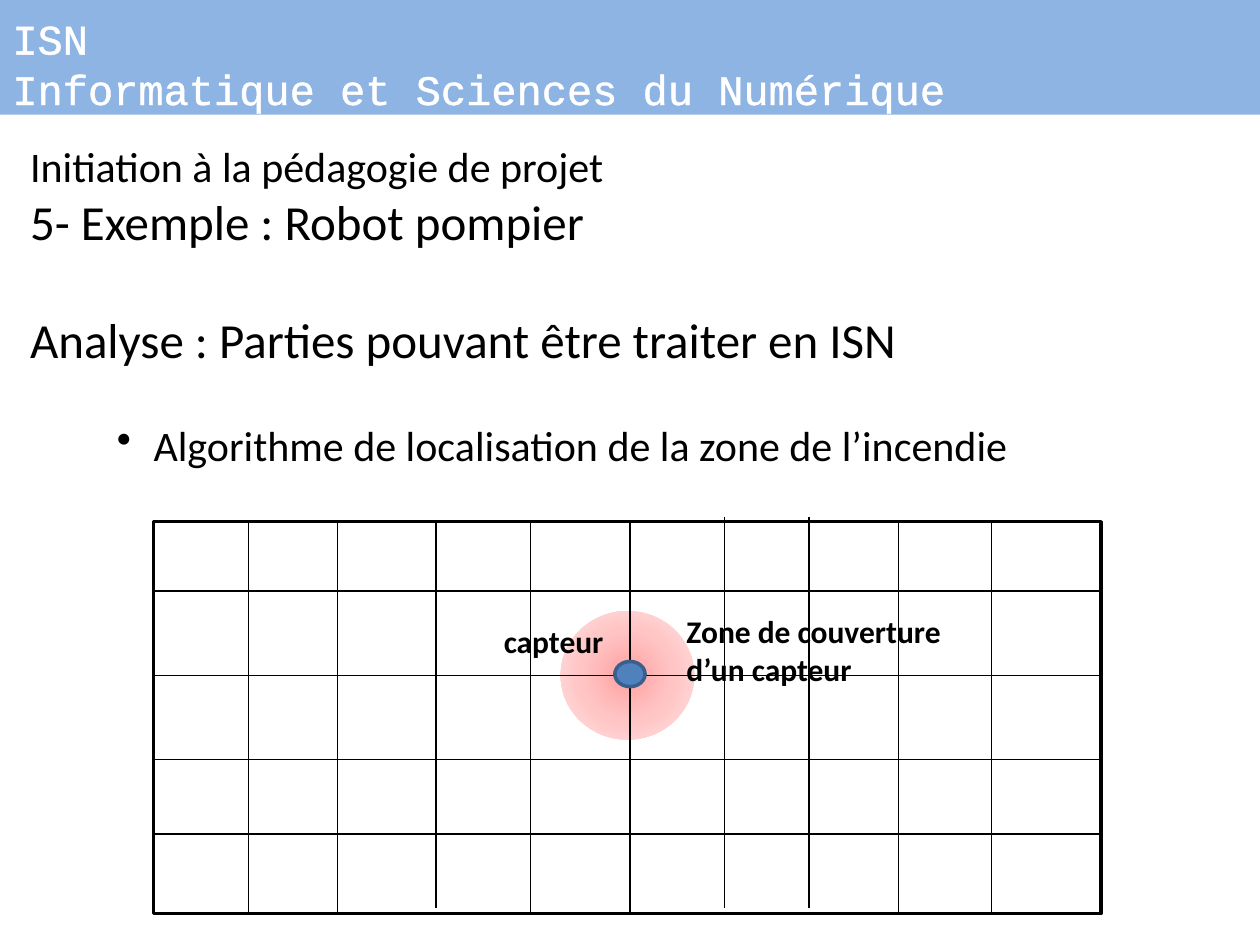
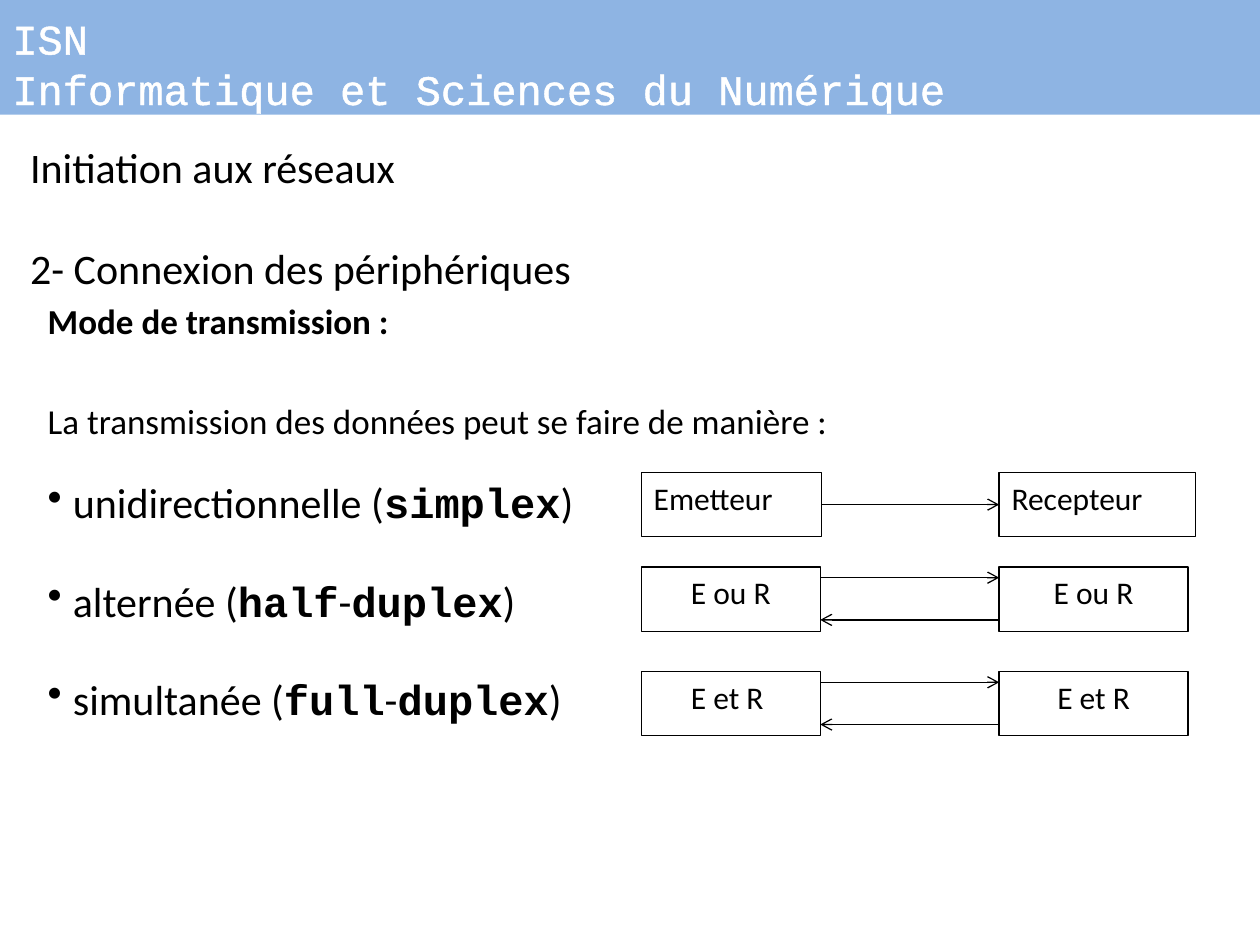
"""Build two course slides: a sensor grid and the transmission modes."""
from dataclasses import dataclass
from typing import NamedTuple

from pptx import Presentation
from pptx.dml.color import RGBColor
from pptx.enum.shapes import MSO_CONNECTOR as Link, MSO_SHAPE as Kind
from pptx.enum.text import MSO_ANCHOR as Anchor, PP_ALIGN as Align
from pptx.oxml import parse_xml
from pptx.oxml.ns import nsdecls, qn
from pptx.util import Inches, Pt

WIDE, HIGH = Inches(10), Inches(7.5)
COL, ROW = WIDE / 100, HIGH / 75
SANS, MONO = "Calibri", "Courier New"
BLACK, WHITE, BAND = "000000", "FFFFFF", "8EB4E3"
DOT, RIM = "4F81BD", "3A5F8C"
GLOW = ((0, "FFA0A0"), (50, "FFC5C5"), (100, "FFE3E3"))


class Box(NamedTuple):
    """Left, top, width and height in grid units."""
    x: float
    y: float
    w: float
    h: float


class Run(NamedTuple):
    """A stretch of text in one font."""
    text: str
    font: str = SANS
    bold: bool = False


@dataclass
class Para:
    """A paragraph; indent holds the left margin and the hanging part."""
    runs: list[Run]
    size: float
    color: str = BLACK
    before: float = 0
    indent: tuple[float, float] = (0, 0)
    mark: bool = False
    align: Align = Align.LEFT
    pitch: float | None = None


@dataclass
class Mode:
    """A transmission mode: two boxes on one row."""
    top: float
    texts: tuple[str, str]
    sizes: tuple[float, float]
    align: Align
    both: bool = True


def paint(text: str) -> RGBColor:
    """Turn a hex string into a colour."""
    return RGBColor.from_string(text)


def put(item, values: dict) -> None:
    """Set attributes from a dict."""
    for name, value in values.items():
        setattr(item, name, value)


def place(box: Box) -> tuple[int, ...]:
    """Turn grid units into lengths."""
    return (round(box.x * COL), round(box.y * ROW),
            round(box.w * COL), round(box.h * ROW))


def plain(text: str, size: float, bold: bool = False, **more) -> Para:
    """Make a paragraph of one run."""
    return Para([Run(text, SANS, bold)], size, **more)


def write(frame, paras: list[Para], wrap: bool = True) -> None:
    """Fill a text frame from the top."""
    put(frame, {"word_wrap": wrap, "vertical_anchor": Anchor.TOP})
    for i, para in enumerate(paras):
        line = frame.paragraphs[0] if i == 0 else frame.add_paragraph()
        put(line, {"alignment": para.align, "space_before": Pt(para.before)})
        if para.pitch:
            line.line_spacing = Pt(para.pitch)
        left, hang = para.indent
        props = line._p.get_or_add_pPr()
        props.set("marL", str(round(left * COL)))
        props.set("indent", str(round(-hang * COL)))
        if para.mark:
            props.append(parse_xml(f'<a:buChar {nsdecls("a")} char="•"/>'))
        for part in para.runs:
            run = line.add_run()
            run.text = part.text
            put(run.font, {"name": part.font, "size": Pt(para.size),
                           "bold": part.bold})
            run.font.color.rgb = paint(para.color)


def note(slide, box: Box, paras: list[Para], wrap: bool = True) -> None:
    """Add a text box."""
    write(slide.shapes.add_textbox(*place(box)).text_frame, paras, wrap)


def draw(slide, kind: Kind, box: Box, fill: str | None = None,
         line: str | None = None, width: float = 0.75):
    """Add a flat shape."""
    shape = slide.shapes.add_shape(kind, *place(box))
    shape.shadow.inherit = False
    if fill:
        shape.fill.solid()
        shape.fill.fore_color.rgb = paint(fill)
    else:
        shape.fill.background()
    if line:
        shape.line.color.rgb = paint(line)
        shape.line.width = Pt(width)
    else:
        shape.line.fill.background()
    return shape


def rule(slide, x: float, y: float, to_x: float, to_y: float,
         arrow: bool = False):
    """Add a thin straight line."""
    line = slide.shapes.add_connector(
        Link.STRAIGHT, round(x * COL), round(y * ROW),
        round(to_x * COL), round(to_y * ROW))
    line.line.color.rgb = paint(BLACK)
    line.line.width = Pt(0.75)
    if arrow:
        line.line._get_or_add_ln().append(
            parse_xml(f'<a:tailEnd {nsdecls("a")} type="arrow"/>'))
    line._element.spPr.append(parse_xml(f'<a:effectLst {nsdecls("a")}/>'))
    return line


def glow(slide, box: Box) -> None:
    """Add an ellipse shaded from its centre."""
    props = draw(slide, Kind.OVAL, box)._element.spPr
    stops = "".join(f'<a:gs pos="{at * 1000}"><a:srgbClr val="{tint}"/></a:gs>'
                    for at, tint in GLOW)
    props.replace(props.find(qn("a:noFill")), parse_xml(
        f'<a:gradFill {nsdecls("a")}><a:gsLst>{stops}</a:gsLst>'
        '<a:path path="circle"><a:fillToRect l="50000" t="50000" '
        'r="50000" b="50000"/></a:path></a:gradFill>'))


def band(slide) -> None:
    """Add the title band with outlined text."""
    frame = draw(slide, Kind.RECTANGLE, Box(0, 0, 100, 9.1), BAND).text_frame
    put(frame, {"margin_top": Inches(0.1), "margin_bottom": 0})
    write(frame, [Para([Run(text, MONO)], 24, WHITE, pitch=28.8)
                  for text in ("ISN", "Informatique et Sciences du Numérique")])
    for line in frame.paragraphs:
        line.runs[0].font._element.insert(0, parse_xml(
            f'<a:ln {nsdecls("a")} w="{Pt(1.45)}"><a:solidFill>'
            f'<a:srgbClr val="{WHITE}"/></a:solidFill></a:ln>'))


def robot(slide) -> None:
    """Draw the sensor grid slide."""
    glow(slide, Box(44.5, 48.5, 10.6, 10.2))
    band(slide)
    note(slide, Box(1.4, 10.7, 95.9, 34), [
        plain("Initiation à la pédagogie de projet", 24),
        plain("5- Exemple : Robot pompier", 28),
        plain("Analyse : Parties pouvant être traiter en ISN", 28, before=34),
        plain("Algorithme de localisation de la zone de l’incendie", 24,
              before=29, indent=(9.8, 2.9), mark=True)])
    zone = Box(12.2, 41.4, 75.2, 31.1)
    draw(slide, Kind.RECTANGLE, zone, line=BLACK, width=2)
    end, foot = zone.x + zone.w, zone.y + zone.h
    high, short = (57.5, 64.2), (34.6, 57.5, 64.2)
    for x in (19.7, 26.8, 34.6, 42.1, 50, 57.5, 64.2, 71.3, 78.7):
        rule(slide, x, zone.y - 0.4 * (x in high),
             x, foot - 0.4 * (x in short))
    for y in (46.9, 53.6, 60.3, 66.2):
        rule(slide, end, y, zone.x, y)
    note(slide, Box(39, 48.9, 10, 4), [plain("capteur", 18, True)], False)
    draw(slide, Kind.OVAL, Box(48.8, 52.5, 2.4, 2), DOT, RIM, 2)
    note(slide, Box(53.5, 48.1, 22.3, 7.1),
         [plain(text, 18, True)
          for text in ("Zone de couverture", "d’un capteur")], False)


def item(start: str, *words: str, before: float) -> Para:
    """Make a bullet that names a mode in bold type."""
    runs = [Run(start + " (")]
    for i, word in enumerate(words):
        runs += [Run("-")] * (i > 0) + [Run(word, MONO, True)]
    return Para(runs + [Run(")")], 24, before=before, indent=(2, 2), mark=True)


def pair(slide, mode: Mode) -> None:
    """Draw two boxes and the arrows between them."""
    left, right = 50.9, 79.3
    ends = []
    for x, text, w in zip((left, right), mode.texts, mode.sizes):
        shape = draw(slide, Kind.RECTANGLE, Box(x, mode.top, w, 5.1),
                     line=BLACK)
        write(shape.text_frame, [plain(text, 18, align=mode.align)])
        ends.append(shape)
    edge = left + mode.sizes[0]
    if mode.both:
        go, back = mode.top + 0.85, mode.top + 4.2
        rule(slide, edge, go, right, go, True)
        rule(slide, right, back, edge, back, True)
    else:
        mid = mode.top + 2.55
        line = rule(slide, edge, mid, right, mid, True)
        line.begin_connect(ends[0], 3)
        line.end_connect(ends[1], 1)


def modes(slide) -> None:
    """Draw the transmission modes slide."""
    band(slide)
    note(slide, Box(1.4, 10.7, 46.1, 13.1), [
        plain("Initiation aux réseaux", 24),
        plain("2- Connexion des périphériques", 24, before=29)], False)
    note(slide, Box(2.8, 23.3, 40.2, 4.4),
         [plain("Mode de transmission :", 20, True)])
    note(slide, Box(2.8, 31.2, 90.2, 30.6), [
        plain("La transmission des données peut se faire de manière :", 20,
              indent=(2, 2)),
        item("unidirectionnelle", "simplex", before=20.4),
        item("alternée", "half", "duplex", before=27.2),
        item("simultanée", "full", "duplex", before=27.2)])
    for mode in (
            Mode(37.5, ("Emetteur", "Recepteur"), (14.3, 15.6), Align.LEFT,
                 False),
            Mode(45, ("E ou R", "E ou R"), (14.2, 15), Align.CENTER),
            Mode(53.3, ("E et R ", "E et R"), (14.2, 15), Align.CENTER)):
        pair(slide, mode)


def main() -> None:
    """Build and save the deck."""
    deck = Presentation()
    put(deck, {"slide_width": WIDE, "slide_height": HIGH})
    for build in (robot, modes):
        build(deck.slides.add_slide(deck.slide_layouts[6]))
    deck.save("out.pptx")


if __name__ == "__main__":
    main()
